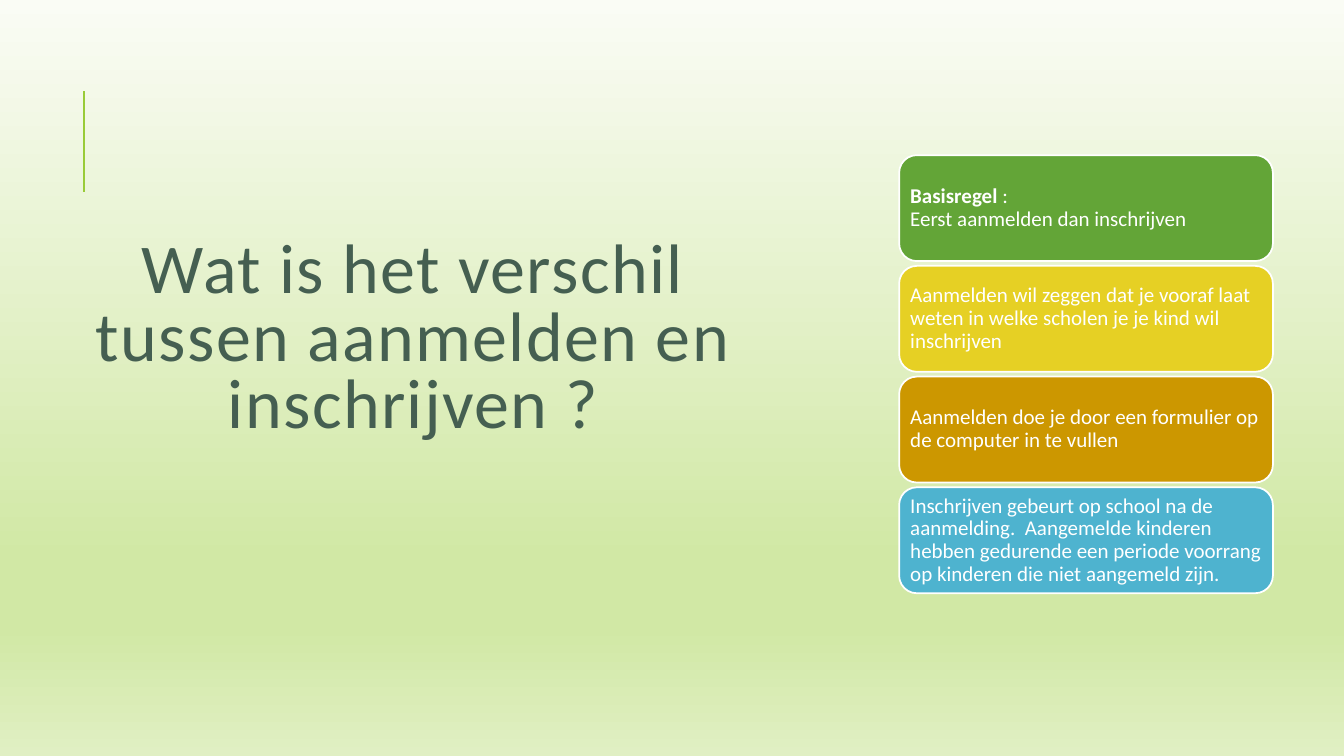
from dataclasses import dataclass

from lxml import etree
from pptx import Presentation
from pptx.dml.color import RGBColor as Color
from pptx.enum.shapes import MSO_CONNECTOR as Connector, MSO_SHAPE as Shape
from pptx.enum.text import MSO_ANCHOR as Anchor, PP_ALIGN as Align
from pptx.oxml.ns import qn
from pptx.util import Cm, Pt


@dataclass(frozen=True)
class Theme:
    font: str = "Calibri"
    title_size: float = 50
    card_size: float = 15
    title: str = "455F51"
    accent: str = "99CB38"
    white: str = "FFFFFF"
    cards: tuple = ("63A537", "E6D024", "CC9700", "4EB3CF")
    background: tuple = ((0, "FAFCF5"), (74, "D1E8A5"), (83, "D1E8A5"), (100, "E0EFC3"))


theme = Theme()


def add_span(para, text, size, color, bold=False):
    span = para.add_run()
    span.text = text
    span.font.name = theme.font
    span.font.size = Pt(size)
    span.font.bold = bold
    span.font.color.rgb = Color.from_string(color)
    return span


deck = Presentation()
deck.slide_width, deck.slide_height = Cm(33.87), Cm(19.05)
page = deck.slides.add_slide(deck.slide_layouts[6])

# Background: vertical gradient with four stops
fill = page.background.fill
fill.gradient()
fill.gradient_angle = 270
stops = next(page.background._cSld.iter(qn("a:gsLst")))
for stop in list(stops):
    stops.remove(stop)
for position, color in theme.background:
    stop = etree.SubElement(stops, qn("a:gs"), pos=str(position * 1000))
    etree.SubElement(stop, qn("a:srgbClr"), val=color)

# Accent line
accent = page.shapes.add_connector(Connector.STRAIGHT, Cm(2.11), Cm(4.83), Cm(2.11), Cm(2.29))
accent.line.color.rgb = Color.from_string(theme.accent)
accent.line.width = Pt(1.5)
etree.SubElement(accent._element.spPr, qn("a:effectLst"))

# Title
title = page.shapes.add_textbox(Cm(2.08), Cm(6.5), Cm(16.69), Cm(4.19))
frame = title.text_frame
frame.word_wrap = True
frame.vertical_anchor = Anchor.MIDDLE
para = frame.paragraphs[0]
para.alignment = Align.CENTER
para.line_spacing = 0.8
span = add_span(para, "Wat is het verschil tussen aanmelden en inschrijven ?",
                theme.title_size, theme.title)
span.font._element.set("spc", "100")

# Cards: each line is a list of (text, bold) spans
cards = [
    [[("Basisregel", True), (" :", False)], [("Eerst aanmelden dan inschrijven", False)]],
    [[("Aanmelden wil zeggen dat je vooraf laat weten in welke scholen "
       "je je kind wil inschrijven", False)]],
    [[("Aanmelden doe je door een formulier op de computer in te vullen", False)]],
    [[("Inschrijven gebeurt op school na de aanmelding.  Aangemelde kinderen hebben "
       "gedurende een periode voorrang op kinderen die niet aangemeld zijn.", False)]],
]
card_top, card_pitch = 3.91, 2.79
for index, (lines, color) in enumerate(zip(cards, theme.cards)):
    box = page.shapes.add_shape(Shape.ROUNDED_RECTANGLE, Cm(22.66),
                                Cm(card_top + index * card_pitch), Cm(9.42), Cm(2.67))
    box.shadow.inherit = False
    box.fill.solid()
    box.fill.fore_color.rgb = Color.from_string(color)
    box.line.color.rgb = Color.from_string(theme.white)
    box.line.width = Pt(1.25)
    frame = box.text_frame
    frame.word_wrap = True
    frame.vertical_anchor = Anchor.MIDDLE
    frame.margin_left = frame.margin_right = Cm(0.15)
    frame.margin_top = frame.margin_bottom = Cm(0.15)
    para = frame.paragraphs[0]
    para.alignment = Align.LEFT
    para.line_spacing = 0.9
    for number, line in enumerate(lines):
        if number:
            para.add_line_break()
        for text, bold in line:
            add_span(para, text, theme.card_size, theme.white, bold)

deck.save("out.pptx")
